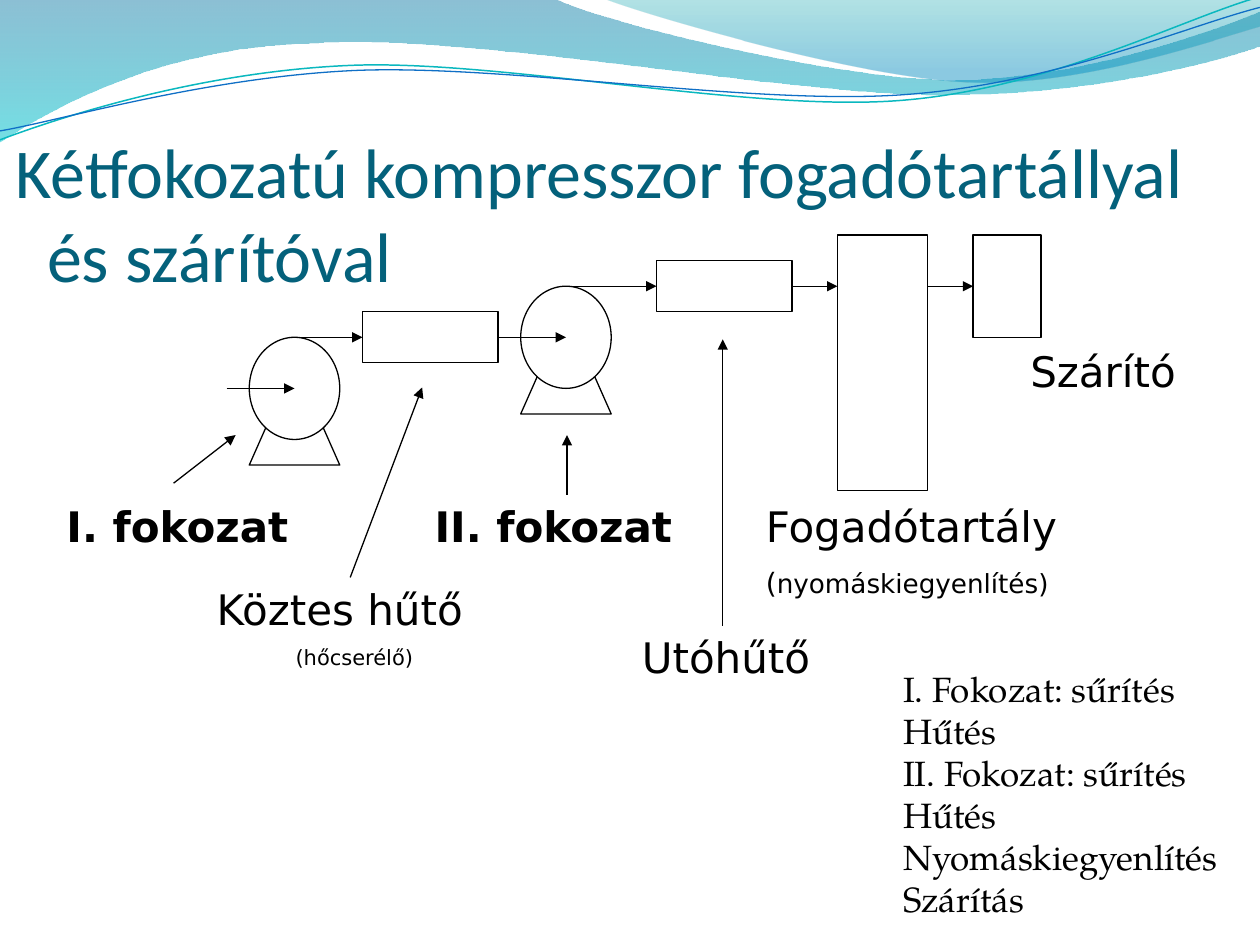
from lxml import etree
from pptx import Presentation
from pptx.dml.color import RGBColor
from pptx.enum.shapes import MSO_CONNECTOR, MSO_SHAPE
from pptx.enum.text import MSO_ANCHOR, MSO_AUTO_SIZE, PP_ALIGN
from pptx.oxml.ns import qn
from pptx.util import Cm, Pt

STRAIGHT = MSO_CONNECTOR.STRAIGHT
RECTANGLE, OVAL = MSO_SHAPE.RECTANGLE, MSO_SHAPE.OVAL
TOP, BOTTOM = MSO_ANCHOR.TOP, MSO_ANCHOR.BOTTOM
NO_AUTOFIT = MSO_AUTO_SIZE.NONE
LEFT, CENTER = PP_ALIGN.LEFT, PP_ALIGN.CENTER

BLACK = RGBColor(0, 0, 0)
WHITE = RGBColor(0xFF, 0xFF, 0xFF)
TITLE_TEAL = RGBColor(0x04, 0x61, 0x7B)
LINE_TEAL = RGBColor(0x0A, 0xB8, 0xBF)
LINE_BLUE = RGBColor(0x0F, 0x6F, 0xC6)
WAVE_BLUE = RGBColor(0x00, 0x74, 0xA1)
WAVE_CYAN = RGBColor(0x00, 0xC6, 0xCF)
CREST_TEAL = RGBColor(0x00, 0xA1, 0xA9)
CREST_BLUE = RGBColor(0x00, 0x8B, 0xBF)

COLUMN, ROW = 0.456, 0.515
THIN = 0.75

WAVE = [(0, 0), (11.18, -0.03),
        ((12.09, 0.43), (16.87, 1.6), (19.25, 1.6)),
        ((21.67, 1.6), (24.33, 0.66), (25.4, 0.23)), (25.43, 0.91),
        ((24.97, 1.12), (22.1, 1.93), (18.95, 1.91)),
        ((15.8, 1.91), (9.7, 0.71), (6.53, 0.86)),
        ((3.28, 0.91), (1.17, 2.11), (-0.03, 2.87)), (0, 0)]
CREST = [(12.17, -0.03),
         ((12.93, 0.28), (17.32, 1.57), (19.53, 1.65)),
         ((21.74, 1.75), (24.41, 0.81), (25.4, 0.53)), (25.4, 0), (12.17, -0.03)]
TEAL_CURVE = [(0, 2.82),
              ((1.22, 2.36), (4.01, 1.45), (7.04, 1.32)),
              ((10.03, 1.19), (15.06, 2.26), (18.11, 2.03)),
              ((21.16, 1.8), (23.83, 0.38), (25.35, -0.05))]
BLUE_CURVE = [(0, 2.64),
              ((1.19, 2.44), (4.17, 1.55), (7.19, 1.42)),
              ((10.24, 1.3), (15.16, 2.13), (18.21, 1.91)),
              ((21.26, 1.7), (23.9, 0.53), (25.4, 0.15))]


def add_outline(page, box, steps, close):
    """Draw a freeform of corners and cubic curves, in cm from the box corner."""
    points = []
    for step in steps:
        points.extend([step] if len(step) == 2 else step)
    places = [(Cm(box[0] + x), Cm(box[1] + y)) for x, y in points]
    builder = page.shapes.build_freeform(*places[0])
    builder.add_line_segments(places[1:], close=close)
    outline = builder.convert_to_shape()
    outline.shadow.inherit = False
    segments = iter(list(outline._element.spPr.iter(qn("a:lnTo"))))
    for step in steps[1:]:
        segment = next(segments)
        if len(step) == 3:
            curve = etree.Element(qn("a:cubicBezTo"))
            segment.addprevious(curve)
            for part in (segment, next(segments), next(segments)):
                curve.append(part[0])
                part.getparent().remove(part)
    return outline


def add_waves(page, box):
    """Draw the two gradient waves and the two curved lines."""
    for steps, stops in ((WAVE, ((0, WAVE_BLUE, 45), (1, WAVE_CYAN, 55))),
                         (CREST, ((0, CREST_TEAL, 30), (0.8, CREST_BLUE, 45)))):
        wave = add_outline(page, box, steps, True)
        wave.line.fill.background()
        wave.fill.gradient()
        wave.fill.gradient_angle = 270
        for stop, (position, color, _) in zip(wave.fill.gradient_stops, stops):
            stop.position = position
            stop.color.rgb = color
        for node, (_, _, opacity) in zip(wave._element.spPr.iter(qn("a:srgbClr")), stops):
            etree.SubElement(node, qn("a:alpha"), val=str(opacity * 1000))
    for steps, color, width in ((TEAL_CURVE, LINE_TEAL, 0.85), (BLUE_CURVE, LINE_BLUE, THIN)):
        curve = add_outline(page, box, steps, False)
        curve.fill.background()
        curve.line.color.rgb = color
        curve.line.width = Pt(width)


def place_holder(holder, box, text, size, font, color, anchor):
    """Bring a placeholder to the front of the page, fill it and format it."""
    holder._element.getparent().append(holder._element)
    holder.left, holder.top, holder.width, holder.height = map(Cm, box)
    frame = holder.text_frame
    frame.text = text
    frame.word_wrap = True
    frame.auto_size = NO_AUTOFIT
    frame.vertical_anchor = anchor
    for para in frame.paragraphs:
        para.alignment = LEFT
        para.space_before = Pt(0)
        for span in para.runs:
            span.font.size, span.font.name = Pt(size), font
            span.font.color.rgb = color
    return frame


def add_title(page, box):
    """Place the title with its hanging indent."""
    text = " Kétfokozatú kompresszor fogadótartállyal és szárítóval"
    frame = place_holder(page.shapes.title, box, text, 40, "Calibri", TITLE_TEAL, BOTTOM)
    frame.margin_left = frame.margin_right = frame.margin_bottom = 0
    layout = frame.paragraphs[0]._p.get_or_add_pPr()
    layout.set("marL", str(Cm(0.95)))
    layout.set("indent", str(-Cm(0.95)))


def add_process_list(page, box):
    """Place the list of process steps without bullets."""
    steps = ("I. Fokozat: sűrítés", "Hűtés", "II. Fokozat: sűrítés", "Hűtés",
             "Nyomáskiegyenlítés", "Szárítás")
    frame = place_holder(page.placeholders[1], box, "\n".join(steps), 20,
                         "TeX Gyre Pagella", BLACK, TOP)
    for para in frame.paragraphs:
        layout = para._p.get_or_add_pPr()
        layout.set("marL", "0")
        layout.set("indent", "0")
        etree.SubElement(layout, qn("a:buNone"))


def outline_in_black(shape):
    """Give a piece of equipment a white fill and a thin black line."""
    shape.shadow.inherit = False
    shape.fill.solid()
    shape.fill.fore_color.rgb = WHITE
    shape.line.color.rgb = BLACK
    shape.line.width = Pt(THIN)


def add_arrow(page, box, start, end):
    """Draw an arrow between two points given in cm from the box corner."""
    ends = [Cm(corner + offset) for point in (start, end) for corner, offset in zip(box, point)]
    arrow = page.shapes.add_connector(STRAIGHT, *ends)
    arrow.line.color.rgb = BLACK
    arrow.line.width = Pt(THIN)
    properties = arrow._element.spPr
    etree.SubElement(properties.find(qn("a:ln")), qn("a:tailEnd"), type="triangle")
    etree.SubElement(properties, qn("a:effectLst"))


def add_equipment(page, box):
    """Draw compressors, coolers, tank and dryer on a grid of columns and rows."""
    def add_unit(kind, column, row, columns, rows):
        """Draw one preset shape on the grid."""
        outline_in_black(page.shapes.add_shape(
            kind, Cm(box[0] + column * COLUMN), Cm(box[1] + row * ROW),
            Cm(columns * COLUMN), Cm(rows * ROW)))

    for column, row in ((1, 4), (13, 2)):
        foot = [((column + x) * COLUMN, (row + y) * ROW)
                for x, y in ((0, 5), (1, 3), (3, 3), (4, 5))]
        outline_in_black(add_outline(page, box, foot, True))
        add_unit(OVAL, column, row, 4, 4)
    for unit in ((6, 3, 6, 2), (19, 1, 6, 2), (27, 0, 4, 10), (33, 0, 3, 4)):
        add_unit(RECTANGLE, *unit)
    for start, end, row in ((0, 3, 6), (3, 6, 4), (12, 15, 4), (15, 19, 2),
                            (25, 27, 2), (31, 33, 2)):
        add_arrow(page, box, (start * COLUMN, row * ROW), (end * COLUMN, row * ROW))


def add_captions(page, box):
    """Name each piece of equipment and point to it."""
    captions = (
        (0, 5.21, 5.74, 1.55, True, "I. fokozat", ()),
        (7.42, 5.21, 5.84, 1.55, True, "II. fokozat", ()),
        (3.03, 6.88, 6.05, 2.44, False, "Köztes hűtő", (("(hőcserélő)", 12),)),
        (11.6, 7.85, 6.05, 1.52, False, "Utóhűtő", ()),
        (14.1, 5.21, 7.65, 2.77, False, "Fogadótartály",
         (("(", 16), ("nyomáskiegyenlítés)", 15))),
        (19.43, 2.08, 3.99, 1.55, False, "Szárító", ()))
    for left, top, width, height, bold, name, note in captions:
        label = page.shapes.add_textbox(Cm(box[0] + left), Cm(box[1] + top),
                                        Cm(width), Cm(height))
        frame = label.text_frame
        frame.word_wrap = True
        frame.text = name
        frame.paragraphs[0].runs[0].font.size = Pt(24)
        if note:
            para = frame.add_paragraph()
            para.space_before = Pt(note[0][1] / 2)
            para.alignment = CENTER if len(note) == 1 else LEFT
            for text, size in note:
                span = para.add_run()
                span.text, span.font.size = text, Pt(size)
        for span in (run for para in frame.paragraphs for run in para.runs):
            span.font.name, span.font.bold = "DejaVu Sans", bold
            span.font.color.rgb = BLACK
    for start, end in (((2.41, 4.98), (3.66, 4.01)), ((5.97, 6.88), (7.42, 3.05)),
                       ((10.34, 5.21), (10.34, 4.01)), ((13.48, 7.85), (13.48, 2.08))):
        add_arrow(page, box, start, end)


def main():
    """Build the slide and save the deck."""
    deck = Presentation()
    deck.slide_width, deck.slide_height = Cm(25.4), Cm(19.05)
    page = deck.slides.add_slide(deck.slide_layouts[1])
    add_waves(page, (0, 0))
    add_title(page, (0, 2.17, 25.1, 3.81))
    add_equipment(page, (4.57, 4.74))
    add_captions(page, (1.09, 4.76))
    add_process_list(page, (17.95, 13.33, 7.11, 5.38))
    deck.save("out.pptx")


if __name__ == "__main__":
    main()
